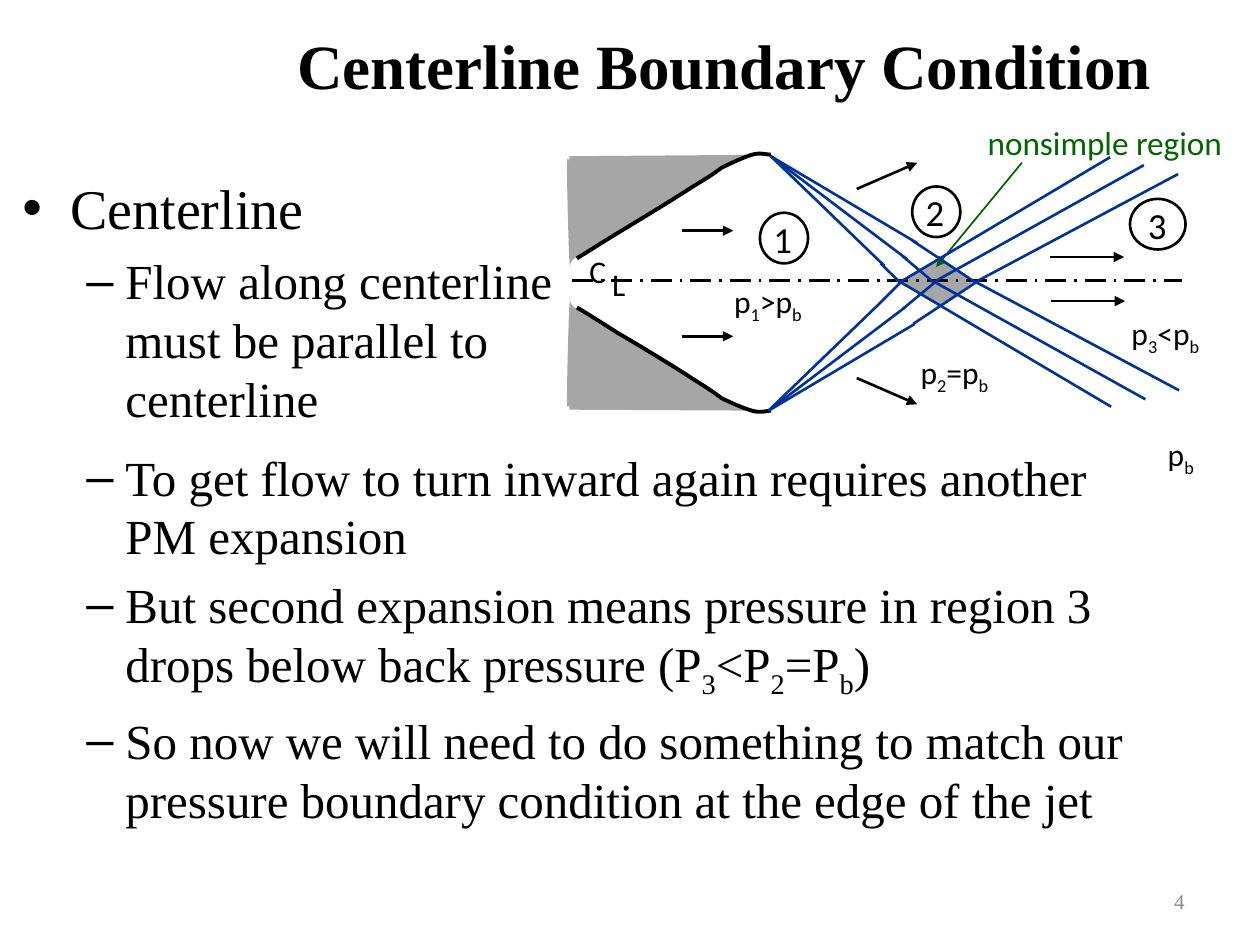
"""Build the slide on the centerline boundary condition of an underexpanded jet."""
from dataclasses import dataclass

from lxml import etree
from pptx import Presentation
from pptx import util as u
from pptx.dml.color import RGBColor
from pptx.enum import dml, shapes, text
from pptx.oxml.ns import qn

Point = tuple[float, float]


@dataclass(frozen=True)
class Theme:
    serif: str = "Times New Roman"
    sans: str = "Calibri"
    ink: str = "000000"
    muted: str = "8C8C8C"
    gray: str = "A6A6A6"
    white: str = "FFFFFF"
    wave: str = "003399"
    note: str = "006600"
    title: int = 36
    bullet: int = 32
    dash: int = 28
    mark: int = 21
    callout: int = 19
    label: int = 18
    number: int = 12


@dataclass(frozen=True)
class Box:
    x: float
    y: float
    w: float
    h: float


@dataclass(frozen=True)
class Label:
    words: str
    box: Box
    wrap: bool = True


@dataclass(frozen=True)
class Region:
    number: str
    box: Box
    dx: float = 0.01


@dataclass(frozen=True)
class Item:
    words: str
    bullet: str
    size: int
    left: float
    hang: float


T = Theme()
WALL = [(4.58, 2.05), (4.63, 2.02), (4.74, 1.95), (4.9, 1.85), (5.05, 1.76), (5.35, 1.58),
        (5.49, 1.49), (5.63, 1.4), (5.66, 1.38), (5.73, 1.33), (5.81, 1.29), (5.9, 1.25),
        (5.97, 1.23), (6.03, 1.21), (6.09, 1.23), (6.12, 1.23)]
BODY = [(4.52, 1.24), (4.52, 1.25), (4.52, 1.27), (4.52, 1.28), (4.52, 1.3), (4.5, 1.19),
        (4.5, 1.32), (4.5, 1.45), (4.51, 1.95), (4.52, 2.07), (4.53, 2.19), (4.5, 2.09),
        (4.56, 2.05), (4.62, 2.01), (4.72, 1.95), (4.88, 1.85), (5.03, 1.76), (5.33, 1.58),
        (5.47, 1.49), (5.61, 1.4), (5.64, 1.38), (5.72, 1.33), (5.8, 1.29), (5.88, 1.25),
        (5.95, 1.23), (6.01, 1.21), (6.07, 1.23), (6.11, 1.23)]
FAN = [(7.02, 2.11), (7.2, 2.06), (7.28, 1.93)]
REFLECTED = [[(6.99, 2.09), (7.14, 2.24), (8.81, 1.25)],
             [(7.16, 2.03), (7.41, 2.24), (9.08, 1.31)],
             [(7.24, 1.91), (7.74, 2.24), (9.35, 1.38)]]
DIAMOND = [(7.14, 2.25), (7.45, 2.06), (7.74, 2.23), (7.47, 2.42)]
PAIRED_ARROWS = [[(5.41, 1.83), (5.82, 1.83)], [(6.8, 1.5), (7.28, 1.29)]]
EXIT_ARROWS = [[(8.34, 2.39), (8.93, 2.39)], [(8.33, 2.04), (8.92, 2.04)]]
LABELS = [Label("p_1>p_b", Box(5.73, 2.19, 1.19, 0.5)), Label("p_b", Box(9.17, 3.4, 0.54, 0.5)),
          Label("p_2=p_b", Box(7.21, 2.75, 1.19, 0.5)), Label("C", Box(4.58, 1.95, 0.42, 0.5)),
          Label("L", Box(4.76, 2.05, 0.34, 0.5)),
          Label("p_3<p_b", Box(8.88, 2.44, 0.94, 0.5), False)]
REGIONS = [Region("1", Box(6.03, 1.69, 0.38, 0.4)), Region("2", Box(7.24, 1.48, 0.38, 0.4)),
           Region("3", Box(8.97, 1.58, 0.44, 0.4), 0.04)]


def length(inches: float) -> u.Length:
    """Convert inches on the drawing grid to a length in centimetres."""
    return u.Cm(round(inches * 2.54, 2))


def apply(target: object, **values: object) -> None:
    """Set each named attribute on the target."""
    for name, value in values.items():
        setattr(target, name, value)


def mirror(points: list[Point], span: float = 4.5, dx: float = 0) -> list[Point]:
    """Reflect points across the centerline, where span is twice its height."""
    return [(round(x + dx, 2), round(span - y, 2)) for x, y in points]


def style(sp, fill: str | None, line: str | None, width: float = 1.5) -> None:
    """Give a shape its fill and outline without a shadow."""
    sp.shadow.inherit = False
    for fmt, color in ((sp.fill, fill), (sp.line.fill, line)):
        if color:
            fmt.solid()
            fmt.fore_color.rgb = RGBColor.from_string(color)
        else:
            fmt.background()
    if line:
        sp.line.width = u.Pt(width)


def add_path(s, points: list[Point], fill: str | None = None, line: str | None = None,
             width: float = 1.5, curved: bool = False) -> None:
    """Draw an outline of straight segments or of cubic curves."""
    grid = [(length(x), length(y)) for x, y in points]
    builder = s.shapes.build_freeform(*grid[0])
    builder.add_line_segments(grid[1:], close=bool(fill) and not curved)
    sp = builder.convert_to_shape()
    if curved:
        outline = sp._element.find(".//" + qn("a:path"))
        segments = outline.findall(qn("a:lnTo"))
        for i in range(0, len(segments), 3):
            curve = etree.SubElement(outline, qn("a:cubicBezTo"))
            for segment in segments[i:i + 3]:
                curve.append(segment[0])
                outline.remove(segment)
    style(sp, fill, line, width)


def add_line(s, points: list[Point], color: str, width: float = 1.5, arrow: bool = False):
    """Draw a straight line with an optional arrowhead."""
    ends = (length(v) for point in points for v in point)
    sp = s.shapes.add_connector(shapes.MSO_CONNECTOR.STRAIGHT, *ends)
    sp.line.width = u.Pt(width)
    sp.line.color.rgb = RGBColor.from_string(color)
    if arrow:
        etree.SubElement(sp.line._get_or_add_ln(), qn("a:tailEnd"), type="triangle")
    etree.SubElement(sp._element.spPr, qn("a:effectLst"))
    return sp


def write(p, words: str, color: str = T.ink, **font: object) -> None:
    """Add runs to a paragraph; an underscore lowers the next letter."""
    first, *rest = words.split("_")
    pieces = [(first, False)] + [q for part in rest for q in ((part[0], True), (part[1:], False))]
    for piece, lowered in pieces:
        if piece:
            r = p.add_run()
            r.text = piece
            apply(r.font, **font)
            r.font.color.rgb = RGBColor.from_string(color)
            if lowered:
                r._r.get_or_add_rPr().set("baseline", "-25000")


def add_frame(s, box: Box, **frame: object):
    """Add an empty text box and return its text frame."""
    tf = s.shapes.add_textbox(*map(length, (box.x, box.y, box.w, box.h))).text_frame
    apply(tf, **{"word_wrap": True, **frame})
    return tf


def add_text(s, box: Box, words: str, size: int, name: str = T.sans, color: str = T.ink,
             align=text.PP_ALIGN.LEFT, bold: bool = False, **frame: object) -> None:
    """Add a one-paragraph text box."""
    p = add_frame(s, box, **frame).paragraphs[0]
    p.alignment = align
    write(p, words, color, size=u.Pt(size), name=name, bold=bold)


def add_bullets(s, box: Box, items: list[Item]) -> None:
    """Add a bulleted list."""
    tf = add_frame(s, box)
    for i, item in enumerate(items):
        p = tf.add_paragraph() if i else tf.paragraphs[0]
        ppr = p._p.get_or_add_pPr()
        p.space_before = u.Pt(0.2 * item.size if i else 0)
        ppr.set("marL", str(length(item.left)))
        ppr.set("indent", str(-length(item.hang)))
        etree.SubElement(ppr, qn("a:buFont"), typeface="Arial")
        etree.SubElement(ppr, qn("a:buChar"), char=item.bullet)
        write(p, item.words, size=u.Pt(item.size), name=T.serif)


def dash(words: str) -> Item:
    """Describe a second-level item."""
    return Item(words, "–", T.dash, 0.82, 0.31)


def add_jet(s) -> None:
    """Draw the nozzle, its waves, flow arrows and labels."""
    add_path(s, DIAMOND, fill=T.gray)
    add_line(s, [(8.11, 1.29), (7.43, 2.12)], T.note, 1, arrow=True)
    add_text(s, Box(7.74, 0.92, 2.08, 0.42), "nonsimple region", T.callout, color=T.note)
    for body, wall in ((BODY, WALL), (mirror(BODY, 4.49), mirror(WALL, 4.49))):
        add_path(s, body, fill=T.gray, curved=True)
        add_path(s, wall, line=T.ink, width=2.25, curved=True)
    for arrow in PAIRED_ARROWS + [mirror(a) for a in PAIRED_ARROWS] + EXIT_ARROWS:
        add_line(s, arrow, T.ink, arrow=True)
    axis = add_line(s, [(4.54, 2.23), (9.38, 2.23)], T.ink)
    axis.line.dash_style = dml.MSO_LINE.LONG_DASH_DOT
    for end in FAN:
        ray = [(6.12, 1.24), end]
        add_line(s, ray, T.wave)
        add_line(s, mirror(ray, dx=-0.02), T.wave)
    for label in LABELS:
        add_text(s, label.box, label.words, T.label, word_wrap=label.wrap)
    for region in REGIONS:
        b = region.box
        sp = s.shapes.add_shape(shapes.MSO_SHAPE.OVAL, *map(length, (b.x, b.y, b.w, b.h)))
        style(sp, T.white, T.ink)
        add_text(s, Box(b.x + region.dx, b.y - 0.02, b.w, 0.45), region.number, T.mark)
    for ray in REFLECTED:
        add_path(s, mirror(ray, 4.48, 0.01), line=T.wave)
        add_path(s, ray, line=T.wave)


def main() -> None:
    """Build and save the slide."""
    prs = Presentation()
    apply(prs, slide_width=length(10), slide_height=length(7.5))
    s = prs.slides.add_slide(prs.slide_layouts[6])
    middle = text.MSO_ANCHOR.MIDDLE
    add_text(s, Box(2, 0.15, 7.5, 0.73), "Centerline Boundary Condition", T.title, T.serif,
             align=text.PP_ALIGN.CENTER, bold=True, vertical_anchor=middle)
    add_bullets(s, Box(0.08, 1.33, 4.83, 2.17), [
        Item("Centerline", "•", T.bullet, 0.38, 0.38),
        dash("Flow along centerline must be parallel to centerline")])
    add_text(s, Box(7.17, 6.95, 2.33, 0.4), "4", T.number, T.serif, T.muted,
             text.PP_ALIGN.RIGHT, vertical_anchor=middle)
    add_bullets(s, Box(0.08, 3.5, 9, 3.67), [
        dash("To get flow to turn inward again requires another PM expansion"),
        dash("But second expansion means pressure in region 3 drops below back pressure "
             "(P_3<P_2=P_b)"),
        dash("So now we will need to do something to match our pressure boundary condition "
             "at the edge of the jet")])
    add_jet(s)
    prs.save("out.pptx")


if __name__ == "__main__":
    main()
